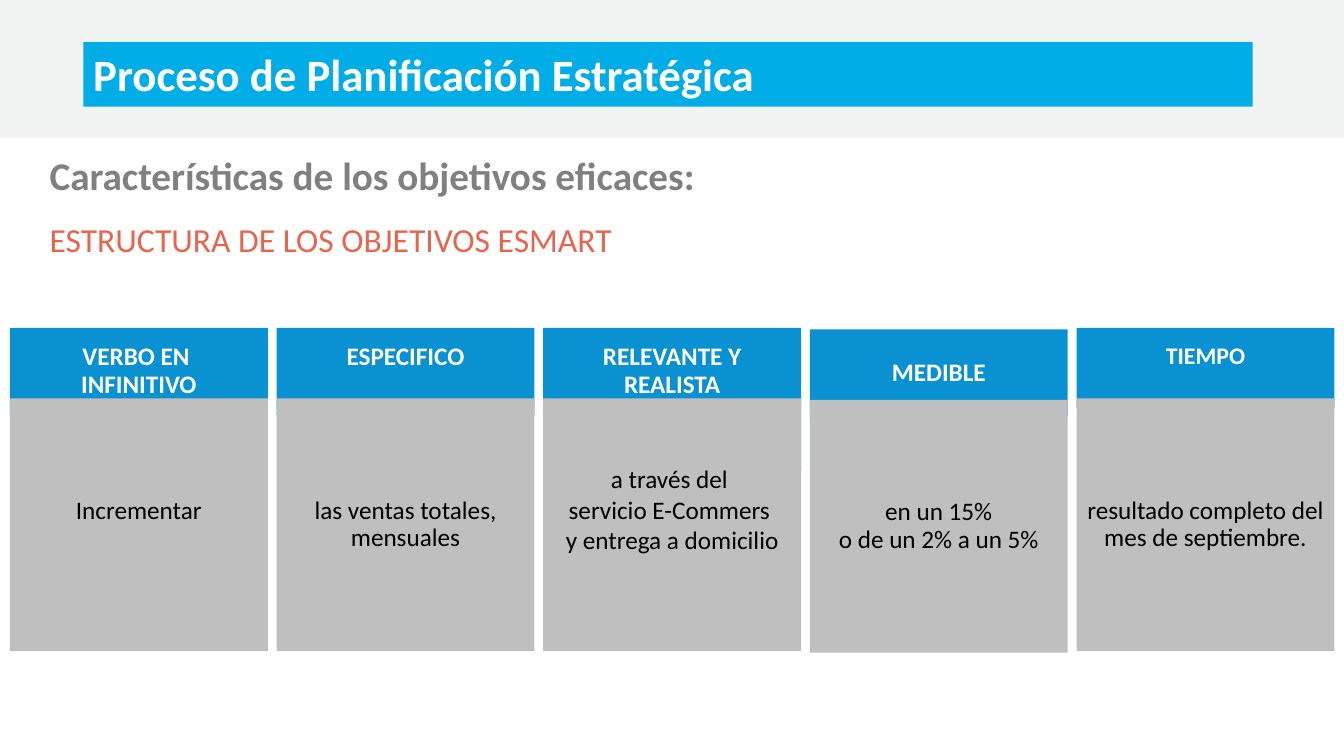
from dataclasses import dataclass

from pptx import Presentation
from pptx.dml.color import RGBColor as Rgb
from pptx.enum.shapes import MSO_SHAPE as Kind
from pptx.enum.text import MSO_ANCHOR as Anchor, PP_ALIGN as Align
from pptx.util import Cm, Pt


@dataclass(frozen=True)
class Theme:
    font: str = "Calibri"
    band: str = "F1F3F2"
    bar: str = "00ADE6"
    head: str = "0991D1"
    cell: str = "BFBFBF"
    white: str = "FFFFFF"
    black: str = "000000"
    gray: str = "808080"
    coral: str = "E9644C"
    title: int = 32
    lead: int = 28
    sub: int = 24
    body: int = 18
    small: int = 17


@dataclass(frozen=True)
class Column:
    head: str
    lines: tuple
    high: float = 2.2
    drop: float = 0
    size: int = Theme.body
    lift: float = 0
    anchor: Anchor = Anchor.TOP
    space: float = 0.9


THEME = Theme()
WIDE, HIGH = 33.87, 19.05

COLUMNS = (
    Column("VERBO EN \nINFINITIVO", ("Incrementar",), high=2.26, lift=0.69),
    Column("ESPECIFICO", ("las ventas totales, mensuales",)),
    Column("RELEVANTE Y REALISTA",
           ("a través del ", "servicio E-Commers ", "y entrega a domicilio"),
           high=3.58, lift=0.69, space=1.0),
    Column("MEDIBLE", ("en un 15%", "o de un 2% a un 5%"),
           drop=0.04, anchor=Anchor.MIDDLE),
    Column("TIEMPO", ("resultado completo del mes de septiembre.",),
           high=2.03, size=THEME.small),
)


def add_box(slide, box, fill, line=None):
    shape = slide.shapes.add_shape(Kind.RECTANGLE, *map(Cm, box))
    shape.shadow.inherit = False
    shape.fill.solid()
    shape.fill.fore_color.rgb = Rgb.from_string(fill)
    if line:
        shape.line.color.rgb = Rgb.from_string(line)
        shape.line.width = Pt(1)
    else:
        shape.line.fill.background()
    return shape


def write(shape, lines, size, color, bold=False, align=Align.LEFT,
          anchor=Anchor.TOP, space=None):
    frame = shape.text_frame
    frame.word_wrap = True
    frame.vertical_anchor = anchor
    for i, text in enumerate(lines):
        para = frame.add_paragraph() if i else frame.paragraphs[0]
        para.alignment = align
        if space:
            para.line_spacing = space
        run = para.add_run()
        run.text = text
        run.font.name = THEME.font
        run.font.size = Pt(size)
        run.font.bold = bold
        run.font.color.rgb = Rgb.from_string(color)
    return frame


def add_band(slide, box):
    # Pale band across the top with the title bar inside it
    x, y, w, h = box
    add_box(slide, box, THEME.band, THEME.band)
    bar = add_box(slide, (x + 2.1, y + 1.06, w - 4.4, 1.63), THEME.bar)
    write(bar, ["Proceso de Planificación Estratégica"], THEME.title,
          THEME.white, True, Align.JUSTIFY)


def add_intro(slide, box):
    # Heading and subheading, one under the other
    x, y, w, h = box
    lead = slide.shapes.add_textbox(Cm(x), Cm(y), Cm(w), Cm(1.93))
    write(lead, ["Características de los objetivos eficaces:"], THEME.lead,
          THEME.gray, True, anchor=Anchor.MIDDLE, space=Pt(32))
    sub = slide.shapes.add_textbox(Cm(x), Cm(y + 1.93), Cm(w), Cm(h - 1.93))
    write(sub, ["ESTRUCTURA DE LOS OBJETIVOS ESMART"], THEME.sub, THEME.coral)


def add_column(slide, box, col):
    # Blue head, partly covered by the gray cell
    x, y, w, h = box
    y += col.drop
    head = add_box(slide, (x, y, w, col.high), THEME.head)
    frame = write(head, col.head.split("\n"), col.size, THEME.white, True,
                  Align.CENTER, col.anchor, 0.9)
    frame.margin_top = frame.margin_bottom = Cm(0.41)
    cell = add_box(slide, (x, y + 1.78, w, h - 1.78), THEME.cell)
    frame = write(cell, col.lines, THEME.body, THEME.black, False,
                  Align.CENTER, Anchor.MIDDLE, col.space)
    frame.paragraphs[0].line_spacing = 0.9
    frame.margin_bottom = Cm(0.13 + col.lift)


def add_grid(slide, box):
    # Five equal columns with a narrow gap
    x, y, w, h = box
    gap = 0.22
    wide = (w - gap * (len(COLUMNS) - 1)) / len(COLUMNS)
    for i, col in enumerate(COLUMNS):
        add_column(slide, (x + i * (wide + gap), y, wide, h), col)


def main():
    deck = Presentation()
    deck.slide_width, deck.slide_height = Cm(WIDE), Cm(HIGH)
    slide = deck.slides.add_slide(deck.slide_layouts[6])
    add_band(slide, (0, 0, WIDE, 3.46))
    add_intro(slide, (1, 3.46, 31.67, 4))
    add_grid(slide, (0.25, 8.26, 33.38, 8.15))
    deck.save("out.pptx")


if __name__ == "__main__":
    main()
